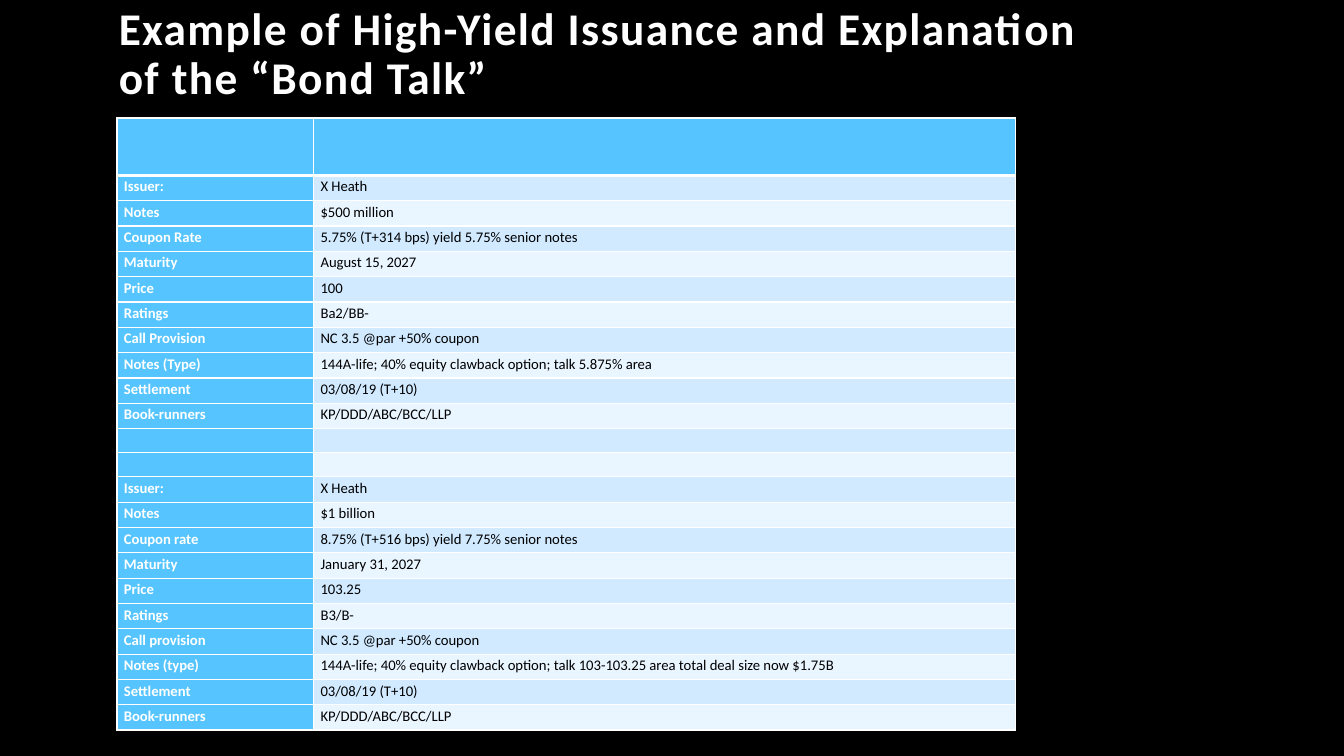
from lxml import etree
from pptx import Presentation
from pptx.dml.color import RGBColor
from pptx.enum.text import MSO_ANCHOR, PP_ALIGN
from pptx.oxml.ns import qn
from pptx.util import Inches, Pt

BOTTOM = MSO_ANCHOR.BOTTOM
JUSTIFY = PP_ALIGN.JUSTIFY

TITLE = "Example of High-Yield Issuance and Explanation of the “Bond Talk”"
BLANK = ("", "")
FIRST_ISSUE = [
    ("Issuer:", "X Heath"),
    ("Notes", "$500 million"),
    ("Coupon Rate", "5.75% (T+314 bps) yield 5.75% senior notes"),
    ("Maturity", "August 15, 2027"),
    ("Price", "100"),
    ("Ratings", "Ba2/BB-"),
    ("Call Provision", "NC 3.5 @par +50% coupon"),
    ("Notes (Type)", "144A-life; 40% equity clawback option; talk 5.875% area"),
    ("Settlement", "03/08/19 (T+10)"),
    ("Book-runners", "KP/DDD/ABC/BCC/LLP"),
]
SECOND_ISSUE = [
    ("Issuer:", "X Heath"),
    ("Notes", "$1 billion"),
    ("Coupon rate", "8.75% (T+516 bps) yield 7.75% senior notes"),
    ("Maturity", "January 31, 2027"),
    ("Price", "103.25"),
    ("Ratings", "B3/B-"),
    ("Call provision", "NC 3.5 @par +50% coupon"),
    ("Notes (type)", "144A-life; 40% equity clawback option; "
                     "talk 103-103.25 area total deal size now $1.75B"),
    ("Settlement", "03/08/19 (T+10)"),
    ("Book-runners", "KP/DDD/ABC/BCC/LLP"),
]
ROWS = [BLANK, *FIRST_ISSUE, BLANK, BLANK, *SECOND_ISSUE]

COLORS = {
    "background": "000000",
    "white": "FFFFFF",
    "black": "000000",
    "label": "56C5FF",
    "odd": "D1EAFF",
    "even": "E9F5FF",
}
FONT = "Calibri"
TABLE_BOX = (1.16, 1.17, 8.92, 6.08)
COL_WIDTHS = (1.95, 6.96)
HEADER_HEIGHT, GAP_HEIGHT = 0.57, 0.24
TEXT_HEIGHT = (TABLE_BOX[3] - HEADER_HEIGHT - 2 * GAP_HEIGHT) / 20
CELL_SIZE = Pt(10.5)
CELL_FORMAT = {"margin_left": Inches(0.07), "margin_right": Inches(0.07),
               "margin_top": 0, "margin_bottom": 0}


def rgb(name):
    return RGBColor.from_string(COLORS[name])


def add_run(p, text, size, bold, color):
    r = p.add_run()
    r.text = text
    for key, value in {"name": FONT, "size": size, "bold": bold}.items():
        setattr(r.font, key, value)
    r.font.color.rgb = rgb(color)
    return r


def add_borders(cell, top, bottom):
    tcPr = cell._tc.get_or_add_tcPr()
    for side, width in {"L": 1, "R": 1, "T": top, "B": bottom}.items():
        ln = etree.SubElement(tcPr, qn(f"a:ln{side}"), w=str(Pt(width)))
        fill = etree.SubElement(ln, qn("a:solidFill"))
        etree.SubElement(fill, qn("a:srgbClr"), val=COLORS["white"])


def fill_cell(cell, row, col, text):
    for key, value in CELL_FORMAT.items():
        setattr(cell, key, value)
    add_borders(cell, 3 if row == 1 else 1, 3 if row == 0 else 1)
    band = "odd" if row % 2 else "even"
    is_label = col == 0
    cell.fill.solid()
    cell.fill.fore_color.rgb = rgb("label" if is_label or row == 0 else band)
    p = cell.text_frame.paragraphs[0]
    if text:
        p.alignment = JUSTIFY
        p.line_spacing = 1.15
        add_run(p, text, CELL_SIZE, is_label, "white" if is_label else "black")
    else:
        etree.SubElement(p._p, qn("a:endParaRPr"), sz="1050")


def row_height(row, label):
    if row == 0:
        return HEADER_HEIGHT
    return TEXT_HEIGHT if label else GAP_HEIGHT


def main():
    prs = Presentation()
    prs.slide_width, prs.slide_height = Inches(13.33), Inches(7.5)
    s = prs.slides.add_slide(prs.slide_layouts[6])
    s.background.fill.solid()
    s.background.fill.fore_color.rgb = rgb("background")

    title = s.shapes.add_textbox(Inches(1.08), Inches(0.25), Inches(10), Inches(0.83))
    tf = title.text_frame
    tf.word_wrap = True
    tf.vertical_anchor = BOTTOM
    p = tf.paragraphs[0]
    p.line_spacing = 0.9
    r = add_run(p, TITLE, Pt(32.4), True, "white")
    r.font._element.set("spc", "100")

    table = s.shapes.add_table(len(ROWS), len(COL_WIDTHS), *map(Inches, TABLE_BOX)).table
    for column, width in zip(table.columns, COL_WIDTHS):
        column.width = Inches(width)
    for row, texts in enumerate(ROWS):
        table.rows[row].height = Inches(row_height(row, texts[0]))
        for col, text in enumerate(texts):
            fill_cell(table.cell(row, col), row, col, text)

    prs.save("out.pptx")


if __name__ == "__main__":
    main()
